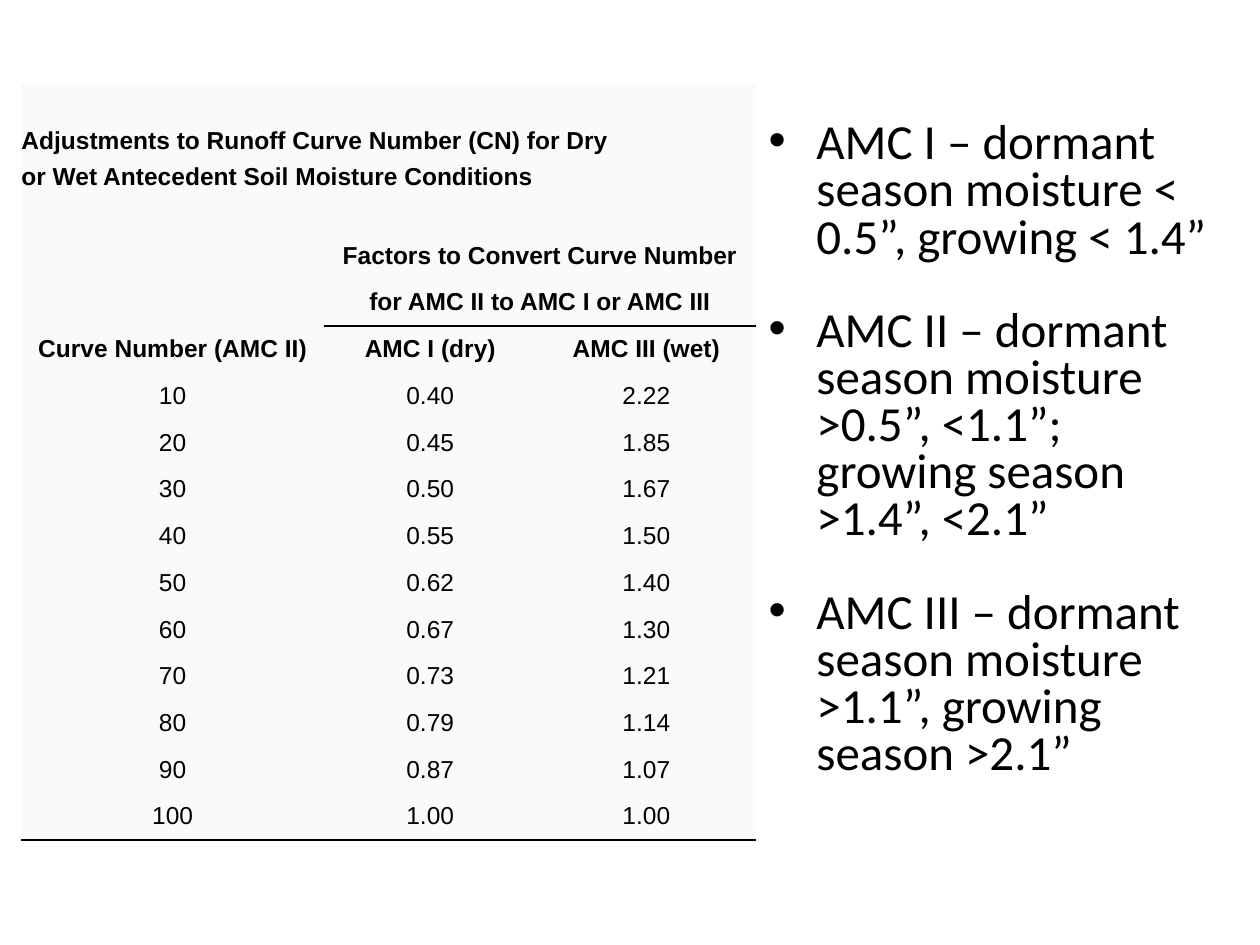
import pptx
import pptx.dml.color
import pptx.enum.text
import pptx.oxml
import pptx.oxml.ns
import pptx.util

INK, PAPER = "000000", "FAFAFA"
COLS = (2.4, 1.69, 1.74)
ROWS = (0.3, 0.29, 0.29, 0.29) + (0.37,) * 13
FACTORS = (
    ("10", "0.40", "2.22"), ("20", "0.45", "1.85"), ("30", "0.50", "1.67"),
    ("40", "0.55", "1.50"), ("50", "0.62", "1.40"), ("60", "0.67", "1.30"),
    ("70", "0.73", "1.21"), ("80", "0.79", "1.14"), ("90", "0.87", "1.07"),
    ("100", "1.00", "1.00"),
)
TABLE_TEXT = (
    ("",),
    ("Adjustments to Runoff Curve Number (CN) for Dry",),
    ("or Wet Antecedent Soil Moisture Conditions",),
    ("", "", ""),
    ("", "Factors to Convert Curve Number"),
    ("", "for AMC II to AMC I or AMC III"),
    ("Curve Number (AMC II)", "AMC I (dry)", "AMC III (wet)"),
) + FACTORS
CONDITIONS = (
    "AMC I – dormant season moisture < 0.5”, growing < 1.4”",
    "AMC II – dormant season moisture >0.5”, <1.1”; growing season >1.4”, <2.1”",
    "AMC III – dormant season moisture >1.1”, growing season >2.1”",
)
HEADER_ROWS = len(TABLE_TEXT) - len(FACTORS)
ALIGN = pptx.enum.text.PP_ALIGN


def rgb(value):
    """Return a colour from a hex string."""
    return pptx.dml.color.RGBColor.from_string(value)


def add_run(p, text, size, font, bold=False):
    """Append one formatted run to a paragraph."""
    r = p.add_run()
    r.text = text
    r.font.size = pptx.util.Pt(size)
    r.font.name = font
    r.font.bold = bold
    r.font.color.rgb = rgb(INK)


def set_borders(cell, ruled):
    """Rule the named sides of a cell and clear its other sides."""
    tc_pr = cell._tc.get_or_add_tcPr()
    for i, side in enumerate("LRTB"):
        paint = (f'<a:solidFill><a:srgbClr val="{INK}"/></a:solidFill>'
                 if side in ruled else "<a:noFill/>")
        tc_pr.insert(i, pptx.oxml.parse_xml(
            f'<a:ln{side} {pptx.oxml.ns.nsdecls("a")} w="12700">{paint}</a:ln{side}>'))


def rules_for(row, col):
    """Name the ruled sides of the cell at a row and column."""
    if row == len(ROWS) - 1 or (row == HEADER_ROWS - 2 and col > 0):
        return "B"
    return "T" if row == HEADER_ROWS - 1 and col > 0 else ""


def format_cell(cell, row, col):
    """Fill, inset and rule one cell."""
    cell.fill.solid()
    cell.fill.fore_color.rgb = rgb(PAPER)
    cell.margin_left = cell.margin_right = 0
    cell.margin_top = cell.margin_bottom = 0
    cell.vertical_anchor = pptx.enum.text.MSO_ANCHOR.MIDDLE
    set_borders(cell, rules_for(row, col))


def write_cell(cell, text, row):
    """Write the text of one cell, or keep an empty one small."""
    p = cell.text_frame.paragraphs[0]
    if text:
        p.alignment = ALIGN.LEFT if row < 3 else ALIGN.CENTER
        add_run(p, text, 14, "Arial", row < HEADER_ROWS)
    else:
        p._p.get_or_add_endParaRPr().set("sz", "1400")


def add_factor_table(s, box):
    """Place the curve number table in a box, sharing it by the grid."""
    left, top, width, height = box
    table = s.shapes.add_table(len(ROWS), len(COLS), left, top, width, height).table
    table.first_row = table.horz_banding = False
    for column, share in zip(table.columns, COLS):
        column.width = int(width * share / sum(COLS))
    for line, share in zip(table.rows, ROWS):
        line.height = int(height * share / sum(ROWS))
    for row, texts in enumerate(TABLE_TEXT):
        for col in range(len(COLS)):
            cell = table.cell(row, col)
            format_cell(cell, row, col)
            write_cell(cell, texts[col] if col < len(texts) else "", row)
        if len(texts) < len(COLS):
            table.cell(row, len(texts) - 1).merge(table.cell(row, len(COLS) - 1))


def add_bullet(p):
    """Give a paragraph a hanging round bullet."""
    p_pr = p._p.get_or_add_pPr()
    p_pr.set("marL", str(pptx.util.Inches(0.38)))
    p_pr.set("indent", str(-pptx.util.Inches(0.38)))
    for tag in ('buFont {} typeface="Arial"', 'buChar {} char="•"'):
        p_pr.append(pptx.oxml.parse_xml(f'<a:{tag.format(pptx.oxml.ns.nsdecls("a"))}/>'))


def add_conditions(s, box):
    """Place the moisture conditions as a bulleted body in a box."""
    sp = s.placeholders[1]
    sp.left, sp.top, sp.width, sp.height = box
    tf = sp.text_frame
    tf.word_wrap = True
    tf.auto_size = pptx.enum.text.MSO_AUTO_SIZE.NONE
    for i, text in enumerate(CONDITIONS):
        p = tf.add_paragraph() if i else tf.paragraphs[0]
        p.line_spacing = 0.8
        p.space_before = pptx.util.Pt(0)
        p.space_after = pptx.util.Pt(26.5)
        add_bullet(p)
        add_run(p, text, 28, "Calibri")


def inches(*lengths):
    """Convert a box in inches to slide units."""
    return [pptx.util.Inches(length) for length in lengths]


def main():
    """Build and save the slide."""
    prs = pptx.Presentation()
    prs.slide_width, prs.slide_height = inches(10, 7.5)
    s = prs.slides.add_slide(prs.slide_layouts[1])
    title = s.shapes.title.element
    title.getparent().remove(title)
    add_factor_table(s, inches(0.17, 0.67, 5.83, 6))
    add_conditions(s, inches(6, 0.92, 3.83, 5.5))
    prs.save("out.pptx")


if __name__ == "__main__":
    main()
